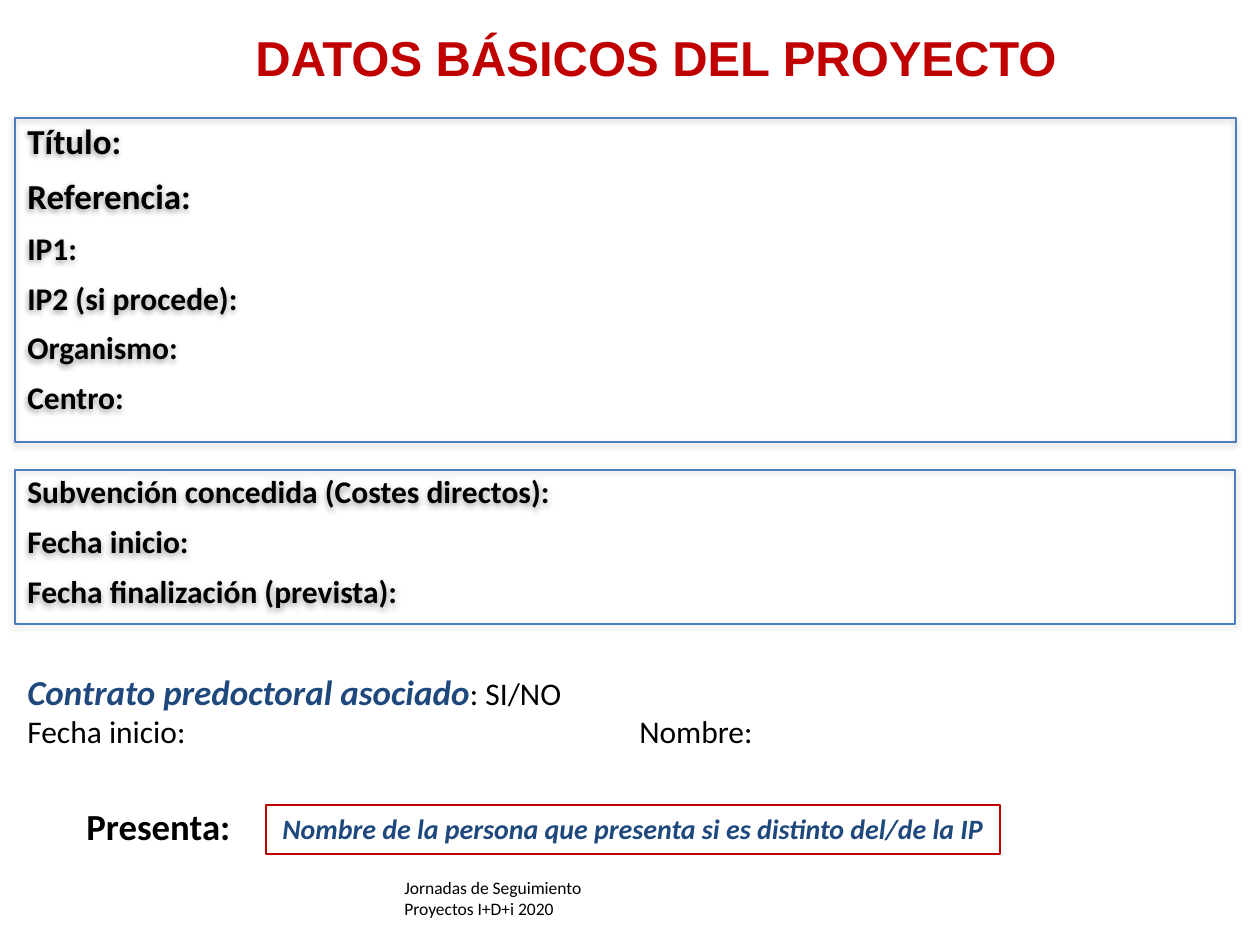
import pptx
import pptx.dml.color
import pptx.enum.shapes
import pptx.enum.text
import pptx.oxml
import pptx.oxml.ns
import pptx.util

SCALE = 914400 / 126
COLORS = {"black": "000000", "red": "C00000", "navy": "1F497D", "border": "4B7EBC"}
ALIGN = pptx.enum.text.PP_ALIGN


def px(n):
    return round(n * SCALE)


def rgb(name):
    return pptx.dml.color.RGBColor.from_string(COLORS[name])


def style(font, size, color="black", bold=False, italic=False, name="Calibri"):
    font.name, font.size = name, pptx.util.Pt(size)
    font.bold, font.italic = bold, italic
    font.color.rgb = rgb(color)


def add_frame(shapes, box, border=None):
    dims = [px(n) for n in box]
    if border:
        sp = shapes.add_shape(pptx.enum.shapes.MSO_SHAPE.RECTANGLE, *dims)
        sp.fill.background()
        sp.line.color.rgb = rgb(border)
        sp.line.width = pptx.util.Pt(0.75)
        sp.shadow.inherit = False
    else:
        sp = shapes.add_textbox(*dims)
    sp.text_frame.word_wrap = True
    sp.text_frame.vertical_anchor = pptx.enum.text.MSO_ANCHOR.TOP
    return sp


def add_lines(tf, lines, align=ALIGN.LEFT, **look):
    for i, (text, size) in enumerate(lines):
        p = tf.add_paragraph() if i else tf.paragraphs[0]
        p.text = text
        p.alignment = align
        style(p.font, size, **look)
    return tf.paragraphs


def add_shadow(sp):
    effects = sp._element.spPr.find(pptx.oxml.ns.qn("a:effectLst"))
    effects.append(pptx.oxml.parse_xml(
        f'<a:outerShdw {pptx.oxml.ns.nsdecls("a")} blurRad="39400" dist="20300" '
        'dir="5400000" rotWithShape="0"><a:srgbClr val="000000">'
        '<a:alpha val="38000"/></a:srgbClr></a:outerShdw>'))


def add_title(s, box):
    tf = add_frame(s.shapes, box).text_frame
    add_lines(tf, [("DATOS BÁSICOS DEL PROYECTO", 28)], ALIGN.CENTER,
              color="red", bold=True, name="Arial")


def add_fields(s, box, lines):
    sp = add_frame(s.shapes, box, "border")
    add_shadow(sp)
    for i, p in enumerate(add_lines(sp.text_frame, lines, bold=True)):
        p.line_spacing = 0.9
        if i:
            p.space_before = p.font.size // 2


def add_contract(s, box):
    tf = add_frame(s.shapes, box).text_frame
    p = tf.paragraphs[0]
    for text, look in [
        ("Contrato predoctoral asociado",
         dict(size=20, color="navy", bold=True, italic=True)),
        (": SI/NO", dict(size=18)),
    ]:
        r = p.add_run()
        r.text = text
        style(r.font, **look)
    p = tf.add_paragraph()
    p.text = "Fecha inicio:\tNombre:"
    p._p.get_or_add_pPr().append(pptx.oxml.parse_xml(
        f'<a:tabLst {pptx.oxml.ns.nsdecls("a")}>'
        f'<a:tab pos="{px(612)}" algn="l"/></a:tabLst>'))
    style(p.font, 18)


def add_presenter(s, box):
    x, y, w, h = box
    shapes = s.shapes.add_group_shape().shapes
    label = add_frame(shapes, (x, y, 195, h))
    add_lines(label.text_frame, [("Presenta:", 21)], bold=True)
    name = add_frame(shapes, (x + 192, y + 7, w - 192, h - 8), "red")
    add_lines(name.text_frame,
              [("Nombre de la persona que presenta si es distinto del/de la IP", 16)],
              ALIGN.CENTER, color="navy", bold=True, italic=True)


def add_footer(s, box):
    tf = add_frame(s.shapes, box).text_frame
    add_lines(tf, [("Jornadas de Seguimiento", 10), ("Proyectos I+D+i 2020", 10)])


def main():
    prs = pptx.Presentation()
    prs.slide_width, prs.slide_height = px(1260), px(945)
    s = prs.slides.add_slide(prs.slide_layouts[6])
    add_footer(s, (392, 871, 445, 55))
    add_fields(s, (15, 118, 1221, 324), [
        ("Título:", 20), ("Referencia:", 20), ("IP1:", 18),
        ("IP2 (si procede):", 18), ("Organismo:", 18), ("Centro:", 18)])
    add_fields(s, (15, 470, 1220, 154), [
        ("Subvención concedida (Costes directos):", 18),
        ("Fecha inicio:", 18), ("Fecha finalización (prevista):", 18)])
    add_presenter(s, (74, 798, 926, 57))
    add_title(s, (223, 21, 866, 72))
    add_contract(s, (15, 664, 1220, 93))
    prs.save("out.pptx")


if __name__ == "__main__":
    main()
